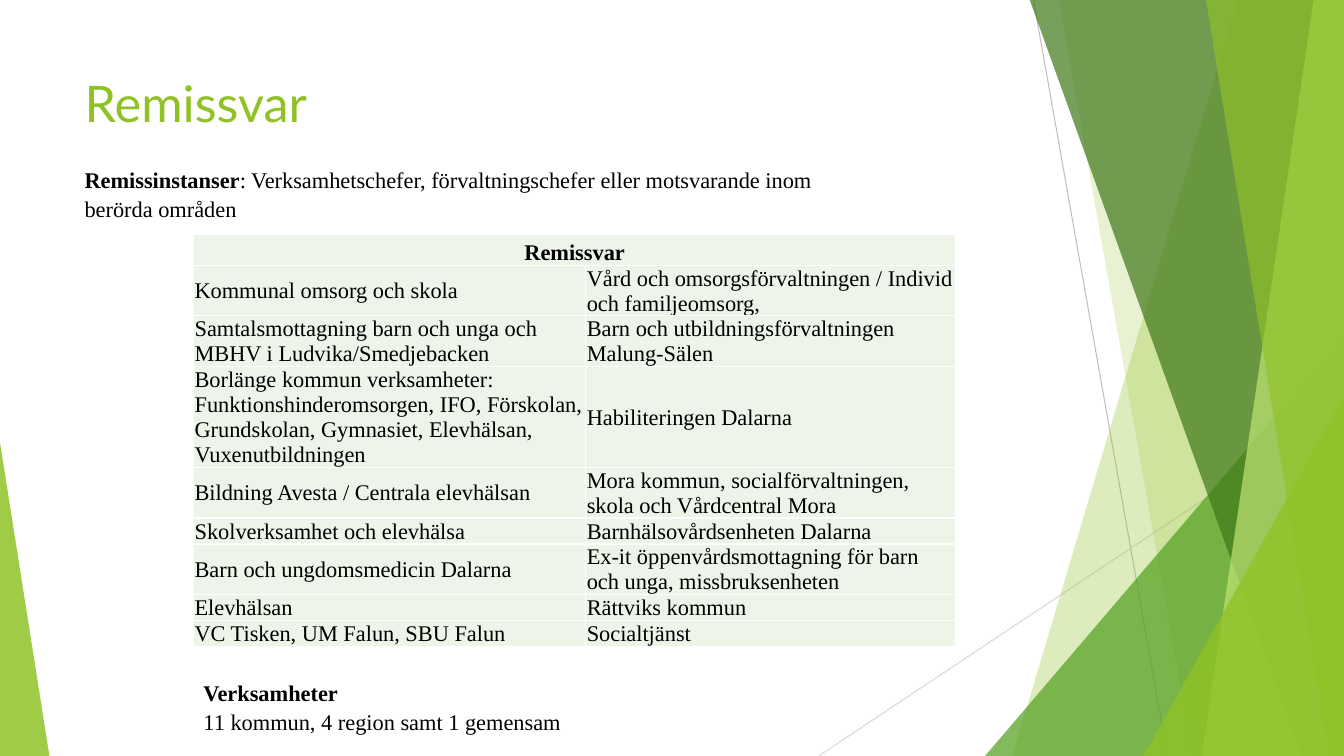
from dataclasses import dataclass

from lxml.etree import SubElement
from pptx import Presentation
from pptx.dml.color import RGBColor
from pptx.enum.shapes import MSO_CONNECTOR, MSO_SHAPE
from pptx.enum.text import MSO_ANCHOR, PP_ALIGN
from pptx.oxml.ns import qn
from pptx.util import Inches, Pt

GREEN = "90C226"
BODY_FONT = "Times New Roman"
RIGHT, BOTTOM, TOP = 13.33, 7.5, -0.01


@dataclass
class Ray:
    start: tuple[float, float]
    end: tuple[float, float]
    color: str


@dataclass
class Band:
    """A panel reaching the right edge, with a slanted left side."""
    top_left: float
    bottom_left: float
    color: str
    opacity: int


@dataclass
class Corner:
    """A right-angled triangle standing on the bottom edge."""
    left: float
    top: float
    width: float
    apex: float
    color: str
    opacity: int


RAYS = [
    Ray((10.25, 0), (11.58, BOTTOM), "BFBFBF"),
    Ray((RIGHT, 4.03), (8.12, BOTTOM), "D9D9D9"),
]
FACETS = [
    Band(12.28, 10.04, GREEN, 30),
    Band(10.5, 11.83, GREEN, 20),
    Corner(9.77, 3.33, 3.56, 1, "54A021", 72),
    Band(10.21, 12.91, "3F7819", 70),
    Band(13.03, 11.92, "C0E474", 70),
    Band(11.96, 13.18, GREEN, 65),
    Corner(11.34, 3.93, 1.99, 1, GREEN, 80),
    Corner(0, 4.39, 0.49, 0, GREEN, 85),
]
COLUMN_WIDTHS = [3.89, 3.67]
HEADER_HEIGHT = 0.3
ANSWERS = [
    (0.4, "Kommunal omsorg och skola",
     "Vård och omsorgsförvaltningen / Individ och familjeomsorg,"),
    (0.4, "Samtalsmottagning barn och unga och MBHV i Ludvika/Smedjebacken",
     "Barn och utbildningsförvaltningen Malung-Sälen"),
    (0.81, "Borlänge kommun verksamheter: Funktionshinderomsorgen, IFO, Förskolan, "
     "Grundskolan, Gymnasiet, Elevhälsan, Vuxenutbildningen", "Habiliteringen Dalarna"),
    (0.4, "Bildning Avesta / Centrala elevhälsan",
     "Mora kommun, socialförvaltningen, skola och Vårdcentral Mora"),
    (0.2, "Skolverksamhet och elevhälsa", "Barnhälsovårdsenheten Dalarna"),
    (0.4, "Barn och ungdomsmedicin Dalarna",
     "Ex-it öppenvårdsmottagning för barn och unga, missbruksenheten"),
    (0.2, "Elevhälsan", "Rättviks kommun"),
    (0.2, "VC Tisken, UM Falun, SBU Falun", "Socialtjänst"),
]


def rgb(value: str) -> RGBColor:
    return RGBColor.from_string(value)


def add_text(paragraph, text: str, *, size: float = 16, font: str = BODY_FONT,
             color: str = "000000", bold: bool = False) -> None:
    run = paragraph.add_run()
    run.text = text
    run.font.size = Pt(size)
    run.font.name = font
    run.font.bold = bold
    run.font.color.rgb = rgb(color)


def add_ray(slide, ray: Ray) -> None:
    points = [Inches(value) for value in ray.start + ray.end]
    connector = slide.shapes.add_connector(MSO_CONNECTOR.STRAIGHT, *points)
    connector.line.color.rgb = rgb(ray.color)
    connector.line.width = Pt(0.75)
    SubElement(connector.element.spPr, qn("a:effectLst"))


def add_facet(slide, facet: Band | Corner) -> None:
    if isinstance(facet, Band):
        builder = slide.shapes.build_freeform(Inches(facet.top_left), Inches(TOP))
        outline = [(RIGHT, TOP), (RIGHT, BOTTOM), (facet.bottom_left, BOTTOM)]
        builder.add_line_segments([(Inches(x), Inches(y)) for x, y in outline], close=True)
        shape = builder.convert_to_shape()
    else:
        shape = slide.shapes.add_shape(
            MSO_SHAPE.ISOSCELES_TRIANGLE, Inches(facet.left), Inches(facet.top),
            Inches(facet.width), Inches(BOTTOM - facet.top))
        shape.adjustments[0] = facet.apex
    shape.shadow.inherit = False
    shape.line.fill.background()
    shape.fill.solid()
    shape.fill.fore_color.rgb = rgb(facet.color)
    color_element = shape.element.spPr.find(qn("a:solidFill"))[0]
    SubElement(color_element, qn("a:alpha"), val=str(facet.opacity * 1000))


def add_note(slide, left: float, top: float, width: float, *, wrap: bool,
             lines: list[list[tuple[str, bool]]]) -> None:
    """Add a text box whose lines are lists of (text, bold) runs."""
    box = slide.shapes.add_textbox(Inches(left), Inches(top), Inches(width), Inches(0.64))
    frame = box.text_frame
    frame.word_wrap = wrap
    for index, runs in enumerate(lines):
        paragraph = frame.add_paragraph() if index else frame.paragraphs[0]
        paragraph.line_spacing = 1.07
        for text, bold in runs:
            add_text(paragraph, text, bold=bold)


def format_cell(cell) -> None:
    cell.margin_left = cell.margin_right = cell.margin_top = Inches(0.01)
    cell.margin_bottom = 0
    cell.vertical_anchor = MSO_ANCHOR.MIDDLE
    properties = cell._tc.get_or_add_tcPr()
    for side in ("lnL", "lnR", "lnT", "lnB"):
        border = SubElement(properties, qn(f"a:{side}"), w=str(Pt(1)))
        SubElement(SubElement(border, qn("a:solidFill")), qn("a:srgbClr"), val="FFFFFF")
    cell.fill.solid()
    cell.fill.fore_color.rgb = rgb("EEF4E8")


def add_answer_table(slide) -> None:
    heights = [HEADER_HEIGHT] + [height for height, *_ in ANSWERS]
    table = slide.shapes.add_table(
        len(heights), len(COLUMN_WIDTHS), Inches(1.92), Inches(2.33),
        Inches(sum(COLUMN_WIDTHS)), Inches(sum(heights))).table
    for column, width in zip(table.columns, COLUMN_WIDTHS):
        column.width = Inches(width)
    for row, height in zip(table.rows, heights):
        row.height = Inches(height)
    for cell in table.iter_cells():
        format_cell(cell)

    header = table.cell(0, 0)
    header.merge(table.cell(0, 1))
    header.vertical_anchor = MSO_ANCHOR.BOTTOM
    header_paragraph = header.text_frame.paragraphs[0]
    header_paragraph.alignment = PP_ALIGN.CENTER
    add_text(header_paragraph, "Remissvar", bold=True)
    for row_index, (_, *texts) in enumerate(ANSWERS, start=1):
        for column_index, text in enumerate(texts):
            add_text(table.cell(row_index, column_index).text_frame.paragraphs[0], text)


def format_title(title) -> None:
    title.left, title.top = Inches(0.74), Inches(0.67)
    title.width, title.height = Inches(9.4), Inches(1.44)
    title.text_frame.vertical_anchor = MSO_ANCHOR.TOP
    paragraph = title.text_frame.paragraphs[0]
    paragraph.alignment = PP_ALIGN.LEFT
    add_text(paragraph, "Remissvar", size=36, font="Lato", color=GREEN)


def main() -> None:
    presentation = Presentation()
    presentation.slide_width = Inches(RIGHT)
    presentation.slide_height = Inches(BOTTOM)
    slide = presentation.slides.add_slide(presentation.slide_layouts[5])
    for ray in RAYS:
        add_ray(slide, ray)
    for facet in FACETS:
        add_facet(slide, facet)
    format_title(slide.shapes.title)
    add_answer_table(slide)
    add_note(slide, 0.74, 1.58, 7.91, wrap=True, lines=[
        [("Remissinstanser", True),
         (": Verksamhetschefer, förvaltningschefer eller motsvarande inom berörda områden",
          False)]])
    add_note(slide, 1.92, 6.67, 3.9, wrap=False, lines=[
        [("Verksamheter", True)],
        [("11 kommun, 4 region samt 1 gemensam", False)]])
    presentation.save("out.pptx")


if __name__ == "__main__":
    main()
